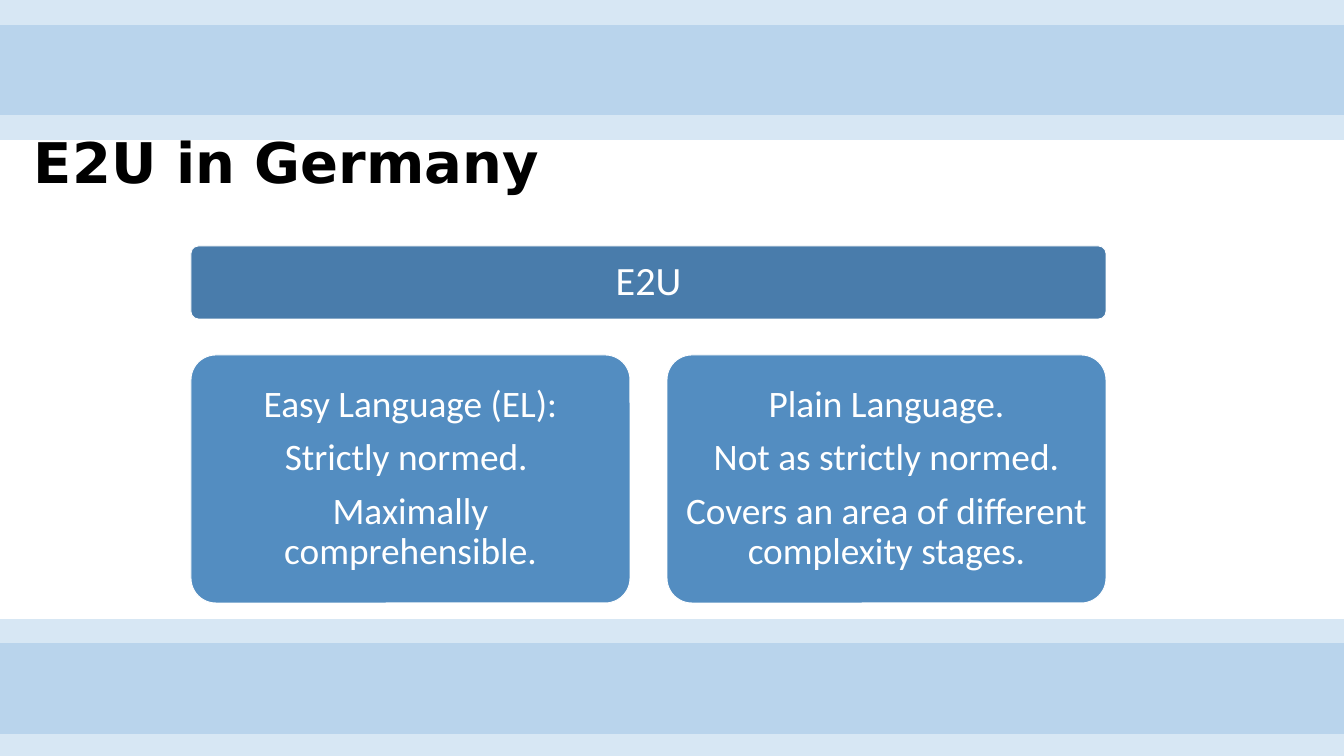
from lxml import etree
from pptx import Presentation
from pptx.dml.color import RGBColor
from pptx.enum.shapes import MSO_SHAPE
from pptx.enum.text import MSO_ANCHOR, PP_ALIGN
from pptx.oxml.ns import qn
from pptx.util import Pt

PX = 914400 / 67.2
SLIDE_W, SLIDE_H = 1344, 756

RECTANGLE, ROUNDED = MSO_SHAPE.RECTANGLE, MSO_SHAPE.ROUNDED_RECTANGLE
MIDDLE = MSO_ANCHOR.MIDDLE
LEFT, CENTER = PP_ALIGN.LEFT, PP_ALIGN.CENTER

BAND_BLUE = RGBColor(0x5B, 0x9B, 0xD5)
ROOT_BLUE = RGBColor(0x49, 0x7C, 0xAB)
BRANCH_BLUE = RGBColor(0x53, 0x8D, 0xC1)
WHITE = RGBColor(0xFF, 0xFF, 0xFF)
BLACK = RGBColor(0, 0, 0)

BRANCHES = [
    ["Easy Language (EL):", "Strictly normed. ", "Maximally comprehensible."],
    ["Plain Language.", "Not as strictly normed.",
     "Covers an area of different complexity stages."],
]


def px(value):
    return round(value * PX)


def add_filled(slide, kind, box, color):
    shape = slide.shapes.add_shape(kind, *map(px, box))
    shape.shadow.inherit = False
    shape.fill.solid()
    shape.fill.fore_color.rgb = color
    return shape


def write(shape, lines, *, font, size, color, bold=False, align=CENTER,
          inset=(8, 8), after=0):
    frame = shape.text_frame
    frame.word_wrap = True
    frame.vertical_anchor = MIDDLE
    frame.margin_left = frame.margin_right = px(inset[0])
    frame.margin_top = frame.margin_bottom = px(inset[1])
    for index, line in enumerate(lines):
        paragraph = frame.paragraphs[0] if index == 0 else frame.add_paragraph()
        paragraph.alignment = align
        paragraph.line_spacing = 0.9
        paragraph.space_after = Pt(after)
        run = paragraph.add_run()
        run.text = line
        run.font.name = font
        run.font.size = Pt(size)
        run.font.bold = bold
        run.font.color.rgb = color


def add_bands(slide, left, top, width, height, offset):
    """Two translucent bands that overlap into a darker middle."""
    for band_top in (top, top + offset):
        band = add_filled(slide, RECTANGLE, (left, band_top, width, height), BAND_BLUE)
        band.line.fill.background()
        tint = band.fill._xPr.find(qn("a:solidFill"))[0]
        etree.SubElement(tint, qn("a:alpha"), val="24000")


def add_title(slide, left, top, width, height):
    title = slide.shapes.add_textbox(*map(px, (left, top, width, height)))
    write(title, ["E2U in Germany"], font="DejaVu Sans", size=60, color=BLACK,
          bold=True, align=LEFT, inset=(10, 5))


def add_card(slide, box, color, lines, size):
    card = add_filled(slide, ROUNDED, box, color)
    card.adjustments[0] = 0.1
    card.line.color.rgb = WHITE
    card.line.width = Pt(1)
    write(card, lines, font="Calibri", size=size, color=WHITE, after=14)


def add_hierarchy(slide, left, top, width, height):
    """One root card over equally wide branch cards."""
    root_height, row_gap, column_gap = 73, 36, 37
    add_card(slide, (left, top, width, root_height), ROOT_BLUE, ["E2U"], 43)
    branch_top = top + root_height + row_gap
    branch_height = height - root_height - row_gap
    branch_width = (width - column_gap * (len(BRANCHES) - 1)) / len(BRANCHES)
    for index, lines in enumerate(BRANCHES):
        branch_left = left + index * (branch_width + column_gap)
        add_card(slide, (branch_left, branch_top, branch_width, branch_height),
                 BRANCH_BLUE, lines, 40)


def main():
    deck = Presentation()
    deck.slide_width, deck.slide_height = px(SLIDE_W), px(SLIDE_H)
    slide = deck.slides.add_slide(deck.slide_layouts[6])

    # Bands along the top and bottom edges
    add_bands(slide, 0, 0, SLIDE_W, 115, 25)
    add_bands(slide, 0, 619, SLIDE_W, 115, 24)

    # Diagram and title
    add_hierarchy(slide, 191, 246, 915, 357)
    add_title(slide, 24, 126, 896, 78)
    deck.save("out.pptx")


if __name__ == "__main__":
    main()
